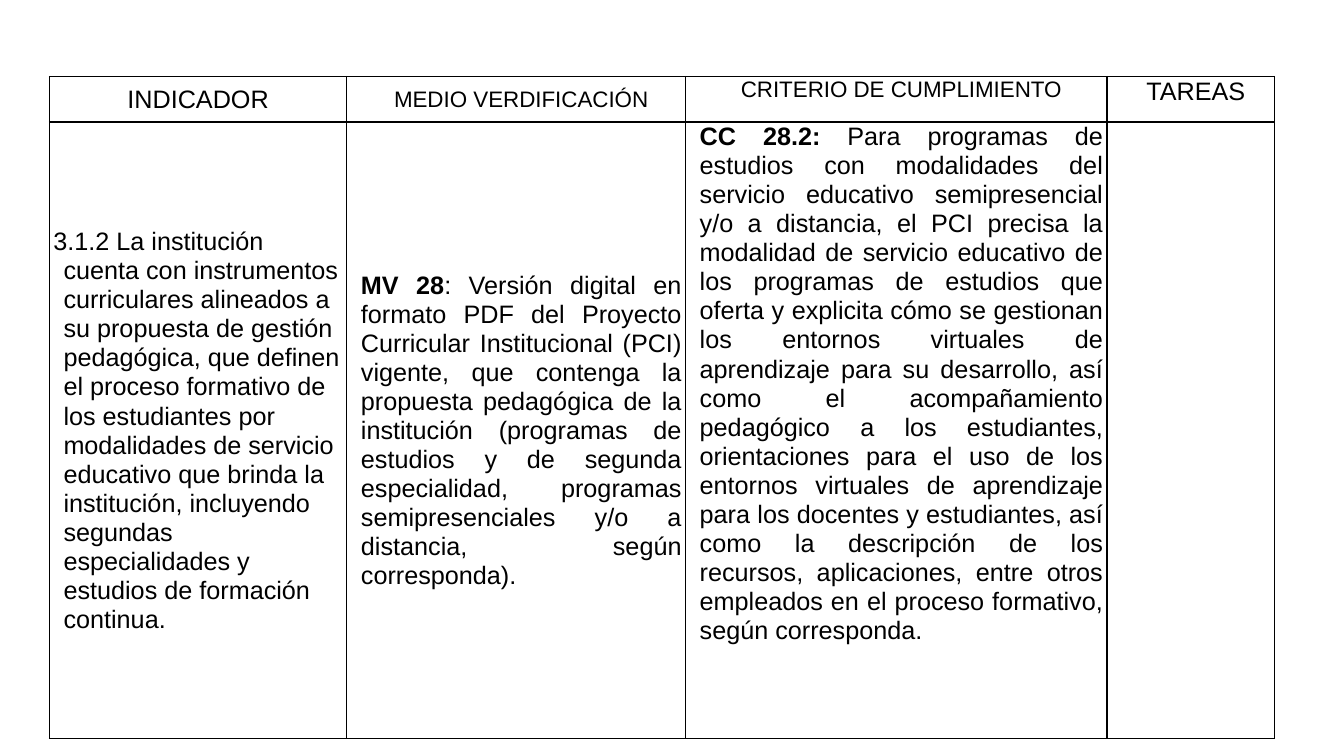
from pptx import Presentation
from pptx.util import Inches, Pt
from pptx.dml.color import RGBColor
from pptx.enum.text import PP_ALIGN, MSO_ANCHOR
from pptx.oxml import parse_xml
from pptx.oxml.ns import nsdecls

BLACK = RGBColor(0, 0, 0)
FONT = "Arial"

# Content: each cell is a list of (text, bold) runs
HEADS = [
    [("INDICADOR", False)],
    [("MEDIO VERDIFICACIÓN", False)],
    [("CRITERIO DE CUMPLIMIENTO", False)],
    [("TAREAS", False)],
]
BODY = [
    [("3.1.2 La institución cuenta con instrumentos curriculares alineados "
      "a su propuesta de gestión pedagógica, que definen el proceso formativo "
      "de los estudiantes por modalidades de servicio educativo que brinda la "
      "institución, incluyendo segundas especialidades y estudios de formación "
      "continua.", False)],
    [("MV 28", True),
     (": Versión digital en formato PDF del Proyecto Curricular Institucional "
      "(PCI) vigente, que contenga la propuesta pedagógica de la institución "
      "(programas de estudios y de segunda especialidad, programas "
      "semipresenciales y/o a distancia, según corresponda).", False)],
    [("CC 28.2:", True),
     (" Para programas de estudios con modalidades del servicio educativo "
      "semipresencial y/o a distancia, el PCI precisa la modalidad de servicio "
      "educativo de los programas de estudios que oferta y explicita cómo se "
      "gestionan los entornos virtuales de aprendizaje para su desarrollo, así "
      "como el acompañamiento pedagógico a los estudiantes, orientaciones para "
      "el uso de los entornos virtuales de aprendizaje para los docentes y "
      "estudiantes, así como la descripción de los recursos, aplicaciones, "
      "entre otros empleados en el proceso formativo, según corresponda.",
      False)],
    [],
]
HEAD_SIZES = [18, 16, 16, 18]
BODY_SIZE = 18
BODY_ALIGNS = [PP_ALIGN.LEFT, PP_ALIGN.JUSTIFY, PP_ALIGN.JUSTIFY, PP_ALIGN.LEFT]
ANCHORS = [MSO_ANCHOR.MIDDLE, MSO_ANCHOR.MIDDLE, MSO_ANCHOR.TOP, MSO_ANCHOR.TOP]

# Layout in inches
LEFT, TOP = 0.49, 0.76
COLS = [2.95, 3.36, 4.18, 1.66]
ROWS = [0.45, 6.12]
INSET, INDENT = 0.04, 0.1


def add_edges(cell):
    props = cell._tc.get_or_add_tcPr()
    for side in "LRTB":
        props.append(parse_xml(
            f'<a:ln{side} {nsdecls("a")} w="{Pt(1)}"><a:solidFill>'
            f'<a:srgbClr val="{BLACK}"/></a:solidFill></a:ln{side}>'))


def fill_cell(cell, runs, size, align, anchor, hang):
    cell.margin_left = cell.margin_right = Inches(INSET)
    cell.margin_top = cell.margin_bottom = 0
    cell.vertical_anchor = anchor
    add_edges(cell)
    cell.fill.background()
    para = cell.text_frame.paragraphs[0]
    para.alignment = align
    para.line_spacing = 1.03
    para.font.size = Pt(size)
    props = para._p.get_or_add_pPr()
    props.set("marL", str(Inches(INDENT)))
    props.set("indent", str(-Inches(INDENT) if hang else 0))
    if hang:
        para.space_after = Pt(12)
    for text, bold in runs:
        run = para.add_run()
        run.text = text
        font = run.font
        font.name, font.size, font.bold = FONT, Pt(size), bold
        font.color.rgb = BLACK


# Slide
deck = Presentation()
deck.slide_width, deck.slide_height = Inches(13.33), Inches(7.5)
slide = deck.slides.add_slide(deck.slide_layouts[6])

# Table
table = slide.shapes.add_table(
    len(ROWS), len(COLS), Inches(LEFT), Inches(TOP),
    Inches(sum(COLS)), Inches(sum(ROWS))).table
table.first_row = table.horz_banding = False
for col, width in zip(table.columns, COLS):
    col.width = Inches(width)
for row, height in zip(table.rows, ROWS):
    row.height = Inches(height)

# Cells
for i in range(len(COLS)):
    hang = i == 0
    fill_cell(table.cell(0, i), HEADS[i], HEAD_SIZES[i],
              PP_ALIGN.CENTER, ANCHORS[i], hang)
    fill_cell(table.cell(1, i), BODY[i], BODY_SIZE,
              BODY_ALIGNS[i], ANCHORS[i], hang)

deck.save("out.pptx")
